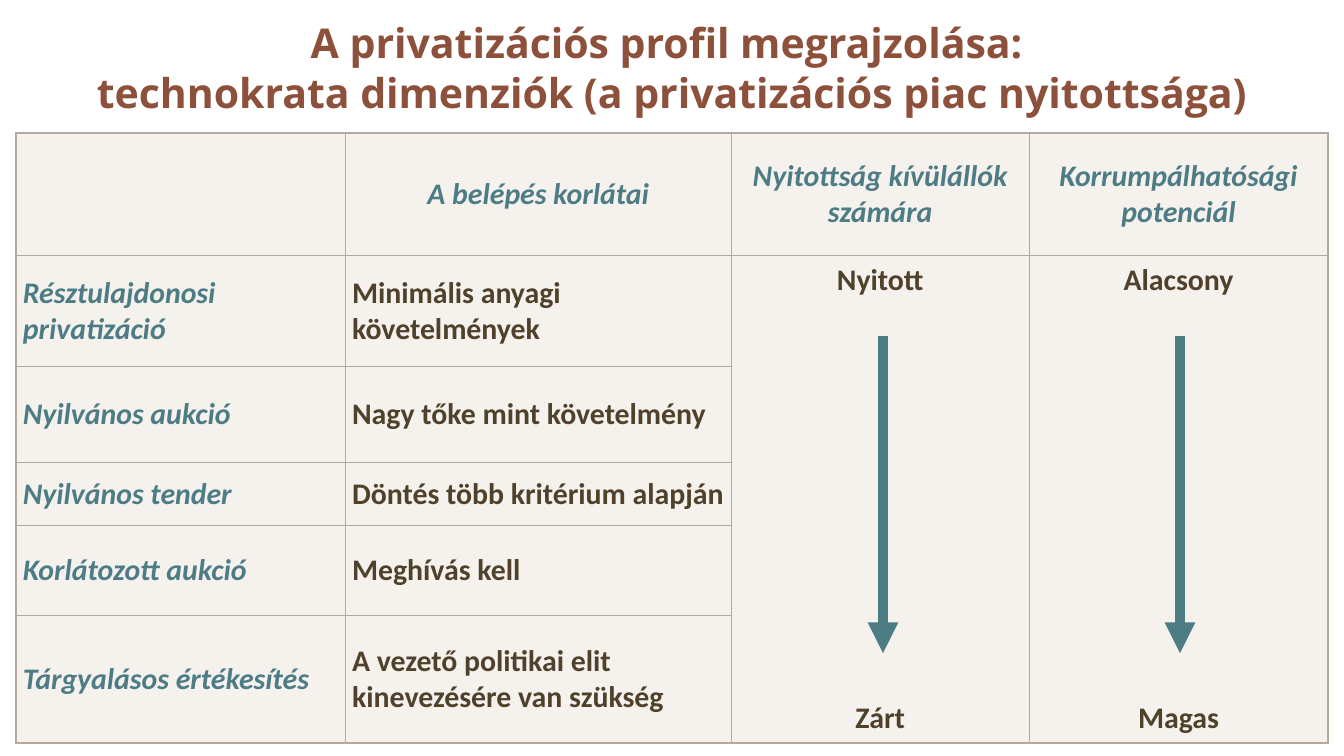
from lxml import etree
from pptx import Presentation
from pptx.dml.color import RGBColor
from pptx.enum import shapes, text
from pptx.oxml.ns import qn
from pptx.util import Inches, Pt

TEAL, BROWN, RUST = "4D7C85", "50412B", "8D503B"
FILL, BORDER = "EFEAE4", "B3A99D"
NO_STYLE = "{2D5ABB26-0587-4C30-8999-92F81FD0307C}"
COLS = [2.45, 2.87, 2.22, 2.22]
ROWS = [0.91, 0.83, 0.71, 0.47, 0.67, 0.95]
HEADERS = ["", "A belépés korlátai", "Nyitottság kívülállók számára",
           "Korrumpálhatósági potenciál"]
METHODS = [
    ("Résztulajdonosi privatizáció", "Minimális anyagi követelmények"),
    ("Nyilvános aukció", "Nagy tőke mint követelmény"),
    ("Nyilvános tender", "Döntés több kritérium alapján"),
    ("Korlátozott aukció", "Meghívás kell"),
    ("Tárgyalásos értékesítés", "A vezető politikai elit kinevezésére van szükség"),
]
SCALES = {2: "Nyitott\nZárt", 3: "Alacsony\nMagas"}
SCALE_GAP = 215  # points between the two ends of a scale


def rgb(color):
    return RGBColor.from_string(color)


def style(p, name, size, color, italic=False, align=None):
    p.alignment = align
    for r in p.runs:
        r.font.name, r.font.size = name, Pt(size)
        r.font.bold, r.font.italic = True, italic
        r.font.color.rgb = rgb(color)


def add_title(s, value):
    sp = s.shapes.title
    sp.left, sp.top, sp.width, sp.height = map(Inches, (0.12, 0, 9.76, 1))
    tf = sp.text_frame
    tf.text = value
    tf.auto_size = text.MSO_AUTO_SIZE.NONE
    tf.vertical_anchor = text.MSO_ANCHOR.MIDDLE
    style(tf.paragraphs[0], "Open Sans", 22, RUST, align=text.PP_ALIGN.CENTER)


def set_cell(cell, value, color, italic=False, align=None,
             anchor=text.MSO_ANCHOR.MIDDLE):
    cell.text = value
    cell.vertical_anchor = anchor
    for p in cell.text_frame.paragraphs:
        style(p, "Calibri", 16, color, italic, align)


def set_box(cell, borders):
    """Fill a cell and draw its borders, given as {side: width in points}."""
    cell.margin_left = cell.margin_right = Inches(0.05)
    cell.margin_top = cell.margin_bottom = Inches(0.05)
    cell.fill.solid()
    cell.fill.fore_color.rgb = rgb(FILL)
    tc_pr = cell._tc.get_or_add_tcPr()
    color = tc_pr.find(".//" + qn("a:srgbClr"))
    etree.SubElement(color, qn("a:alpha"), val="60000")
    for i, (side, width) in enumerate(borders.items()):
        ln = etree.Element(qn("a:ln" + side), w=str(Pt(width)))
        solid = etree.SubElement(ln, qn("a:solidFill"))
        etree.SubElement(solid, qn("a:srgbClr"), val=BORDER)
        tc_pr.insert(i, ln)


def borders_of(cell, row, col):
    """Outer edges are 1 pt, inner ones 0.5 pt; merged cells have no inner edge."""
    last_row, last_col = len(ROWS) - 1, len(COLS) - 1
    bottom = row + cell.span_height - 1 if cell.is_merge_origin else row
    borders = {"L": 1 if col == 0 else 0.5, "R": 1 if col == last_col else 0.5}
    if not cell.is_spanned:
        borders["T"] = 1 if row == 0 else 0.5
    if not cell.is_spanned or row == last_row:
        borders["B"] = 1 if bottom == last_row else 0.5
    return borders


def add_table(s):
    frame = s.shapes.add_table(len(ROWS), len(COLS), Inches(0.12), Inches(0.99),
                               Inches(sum(COLS)), Inches(sum(ROWS)))
    tbl = frame.table
    tbl.first_row = tbl.horz_banding = False
    tbl._tbl.tblPr.find(qn("a:tableStyleId")).text = NO_STYLE
    for column, width in zip(tbl.columns, COLS):
        column.width = Inches(width)
    for row, height in zip(tbl.rows, ROWS):
        row.height = Inches(height)

    center = text.PP_ALIGN.CENTER
    for col, value in enumerate(HEADERS):
        set_cell(tbl.cell(0, col), value, TEAL, True, center)
    for row, (method, limit) in enumerate(METHODS, 1):
        set_cell(tbl.cell(row, 0), method, TEAL, True)
        set_cell(tbl.cell(row, 1), limit, BROWN)
    for col, value in SCALES.items():
        cell = tbl.cell(1, col)
        cell.merge(tbl.cell(len(ROWS) - 1, col))
        set_cell(cell, value, BROWN, align=center, anchor=text.MSO_ANCHOR.TOP)
        cell.text_frame.paragraphs[1].space_before = Pt(SCALE_GAP)

    for row in range(len(ROWS)):
        for col in range(len(COLS)):
            cell = tbl.cell(row, col)
            set_box(cell, borders_of(cell, row, col))


def add_arrow(s, x, top, bottom):
    line = s.shapes.add_connector(shapes.MSO_CONNECTOR.STRAIGHT, Inches(x),
                                  Inches(top), Inches(x), Inches(bottom))
    line.line.color.rgb = rgb(TEAL)
    line.line.width = Pt(5.5)
    etree.SubElement(line.line._get_or_add_ln(), qn("a:tailEnd"), type="triangle")
    etree.SubElement(line._element.spPr, qn("a:effectLst"))


def main():
    prs = Presentation()
    prs.slide_width = Inches(10)
    prs.slide_height = prs.slide_width * 9 // 16
    s = prs.slides.add_slide(prs.slide_layouts[5])
    add_title(s, "A privatizációs profil megrajzolása: \v"
                 "technokrata dimenziók (a privatizációs piac nyitottsága)")
    add_table(s)
    for x in (6.57, 8.78):
        add_arrow(s, x, 2.5, 4.86)
    prs.save("out.pptx")


if __name__ == "__main__":
    main()
